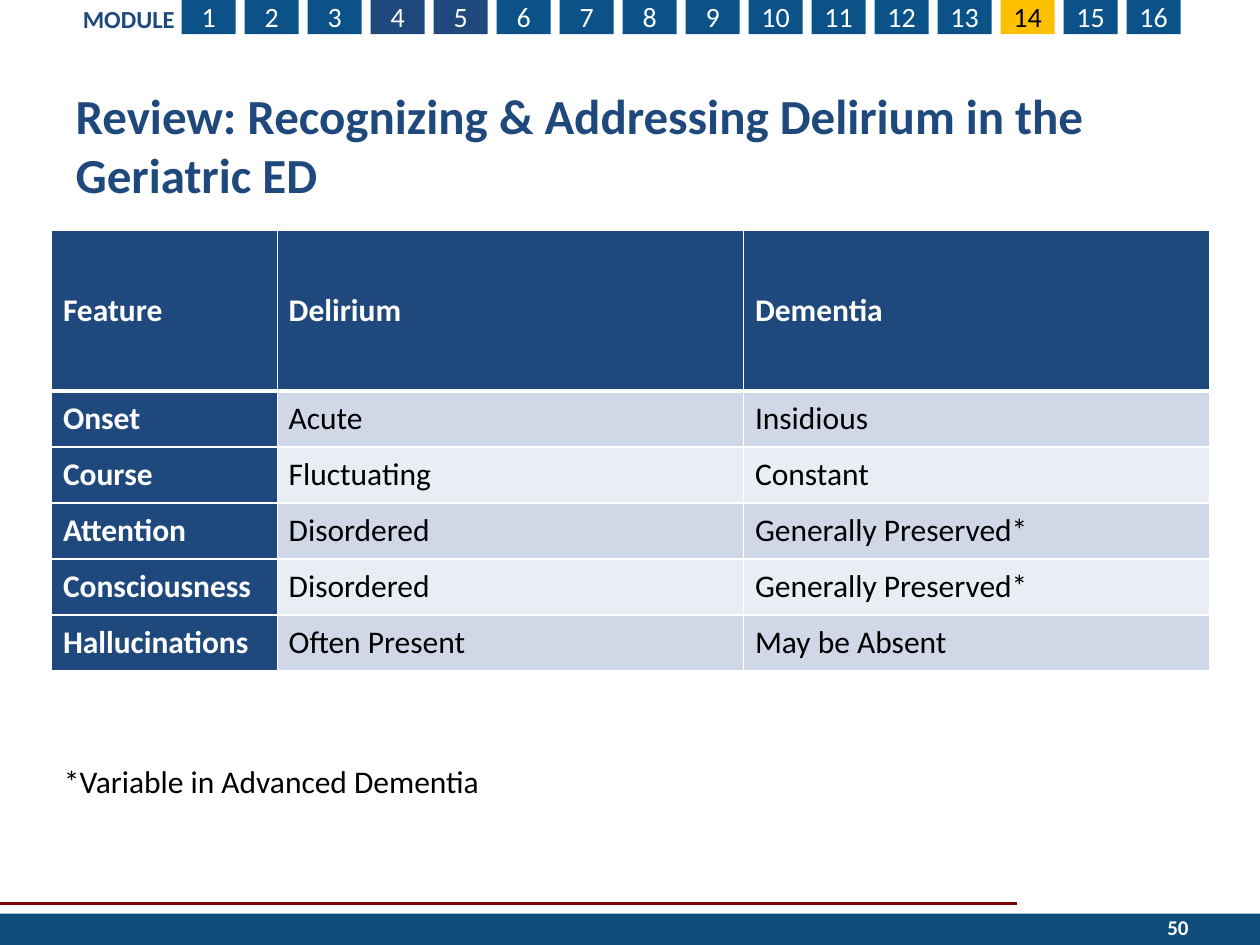
"""Build the delirium and dementia review slide."""
from dataclasses import dataclass

from lxml import etree
from pptx import Presentation
from pptx.dml.color import RGBColor
from pptx.enum import shapes, text
from pptx.oxml import ns
from pptx.util import Cm, Pt

NAVY = RGBColor(0x1F, 0x49, 0x7D)
BLUE = RGBColor(0x0A, 0x52, 0x87)
FOOTER_BLUE = RGBColor(0x0F, 0x4D, 0x7B)
GOLD = RGBColor(0xFF, 0xC0, 0x00)
MAROON = RGBColor(0x80, 0x00, 0x00)
DARK_BAND = RGBColor(0xD0, 0xD8, 0xE8)
LIGHT_BAND = RGBColor(0xE9, 0xED, 0xF4)
WHITE = RGBColor(0xFF, 0xFF, 0xFF)
BLACK = RGBColor(0x00, 0x00, 0x00)

MODULE_COUNT = 16
CURRENT_MODULE = 14
NAVY_MODULES = (4, 5)
COLUMN_WIDTHS = (4.55, 9.4, 9.4)
HEADER_HEIGHT, ROW_HEIGHT = 3.23, 1.13
ROWS = (
    ("Feature", "Delirium", "Dementia"),
    ("Onset", "Acute", "Insidious"),
    ("Course", "Fluctuating", "Constant"),
    ("Attention", "Disordered", "Generally Preserved*"),
    ("Consciousness", "Disordered", "Generally Preserved*"),
    ("Hallucinations", "Often Present", "May be Absent"),
)


@dataclass(frozen=True)
class Box:
    left: float
    top: float
    width: float
    height: float

    def lengths(self) -> tuple:
        return Cm(self.left), Cm(self.top), Cm(self.width), Cm(self.height)


@dataclass(frozen=True)
class Style:
    size: int
    color: RGBColor
    bold: bool = False
    align: text.PP_ALIGN = text.PP_ALIGN.LEFT


def write(frame, words: str, style: Style) -> None:
    frame.text = words
    paragraph = frame.paragraphs[0]
    paragraph.alignment = style.align
    font = paragraph.runs[0].font
    font.name, font.size, font.bold = "Calibri", Pt(style.size), style.bold
    font.color.rgb = style.color


def add_rectangle(slide, box: Box, color: RGBColor):
    shape = slide.shapes.add_shape(shapes.MSO_SHAPE.RECTANGLE, *box.lengths())
    shape.shadow.inherit = False
    shape.fill.solid()
    shape.fill.fore_color.rgb = color
    shape.line.fill.background()
    return shape


def add_text(slide, box: Box, words: str, style: Style,
             anchor=text.MSO_ANCHOR.TOP) -> None:
    frame = slide.shapes.add_textbox(*box.lengths()).text_frame
    frame.word_wrap = True
    frame.vertical_anchor = anchor
    write(frame, words, style)


def add_footer(slide) -> None:
    line = slide.shapes.add_connector(
        shapes.MSO_CONNECTOR.STRAIGHT, Cm(-0.03), Cm(18.21), Cm(20.5), Cm(18.21))
    line.line.color.rgb = MAROON
    line.line.width = Pt(1.5)
    etree.SubElement(line._element.spPr, ns.qn("a:effectLst"))
    add_rectangle(slide, Box(0, 18.42, 25.4, 0.63), FOOTER_BLUE)
    add_text(slide, Box(18.29, 18.19, 5.92, 1.02), "50",
             Style(12, WHITE, True, text.PP_ALIGN.RIGHT), text.MSO_ANCHOR.MIDDLE)


def add_module_bar(slide) -> None:
    for number in range(1, MODULE_COUNT + 1):
        current = number == CURRENT_MODULE
        color = GOLD if current else NAVY if number in NAVY_MODULES else BLUE
        box = Box(3.66 + 1.27 * (number - 1), -0.02, 1.09, 0.71)
        frame = add_rectangle(slide, box, color).text_frame
        frame.margin_left = frame.margin_right = 0
        frame.margin_top = frame.margin_bottom = 0
        frame.vertical_anchor = text.MSO_ANCHOR.MIDDLE
        write(frame, str(number),
              Style(16, BLACK if current else WHITE, align=text.PP_ALIGN.CENTER))
    add_text(slide, Box(1.42, -0.05, 2.57, 0.86), "MODULE", Style(14, NAVY, True))


def add_title(slide) -> None:
    title = slide.shapes.title
    title.left, title.top, title.width, title.height = Box(1.27, 1.57, 22.86, 2.67).lengths()
    write(title.text_frame, "Review: Recognizing & Addressing Delirium in the Geriatric ED",
          Style(28, NAVY, True))
    title.text_frame.auto_size = text.MSO_AUTO_SIZE.NONE
    title.text_frame.vertical_anchor = text.MSO_ANCHOR.MIDDLE


def set_borders(cell, bottom: float) -> None:
    properties = cell._tc.get_or_add_tcPr()
    widths = {"lnL": 1, "lnR": 1, "lnT": 1, "lnB": bottom}
    for position, (side, width) in enumerate(widths.items()):
        border = etree.Element(ns.qn(f"a:{side}"), w=str(Pt(width)))
        fill = etree.SubElement(border, ns.qn("a:solidFill"))
        etree.SubElement(fill, ns.qn("a:srgbClr"), val=str(WHITE))
        properties.insert(position, border)


def add_comparison_table(slide) -> None:
    height = HEADER_HEIGHT + ROW_HEIGHT * (len(ROWS) - 1)
    box = Box(1.04, 4.65, sum(COLUMN_WIDTHS), height)
    table = slide.shapes.add_table(len(ROWS), len(COLUMN_WIDTHS), *box.lengths()).table
    for column, width in zip(table.columns, COLUMN_WIDTHS):
        column.width = Cm(width)
    for row_index, words in enumerate(ROWS):
        table.rows[row_index].height = Cm(ROW_HEIGHT if row_index else HEADER_HEIGHT)
        band = DARK_BAND if row_index % 2 else LIGHT_BAND
        for column_index, word in enumerate(words):
            heading = row_index == 0 or column_index == 0
            cell = table.cell(row_index, column_index)
            cell.fill.solid()
            cell.fill.fore_color.rgb = NAVY if heading else band
            cell.margin_left = cell.margin_right = Cm(0.23)
            cell.margin_top = cell.margin_bottom = 0
            cell.vertical_anchor = text.MSO_ANCHOR.MIDDLE
            write(cell.text_frame, word, Style(18, WHITE if heading else BLACK, heading))
            cell.text_frame.paragraphs[0].space_after = Pt(6)
            set_borders(cell, 1 if row_index else 3)


def main() -> None:
    presentation = Presentation()
    presentation.slide_width, presentation.slide_height = Cm(25.4), Cm(19.05)
    slide = presentation.slides.add_slide(presentation.slide_layouts[5])
    add_footer(slide)
    add_module_bar(slide)
    add_title(slide)
    add_comparison_table(slide)
    add_text(slide, Box(1.04, 15.24, 10.39, 1.02), "*Variable in Advanced Dementia",
             Style(18, BLACK))
    presentation.save("out.pptx")


if __name__ == "__main__":
    main()
